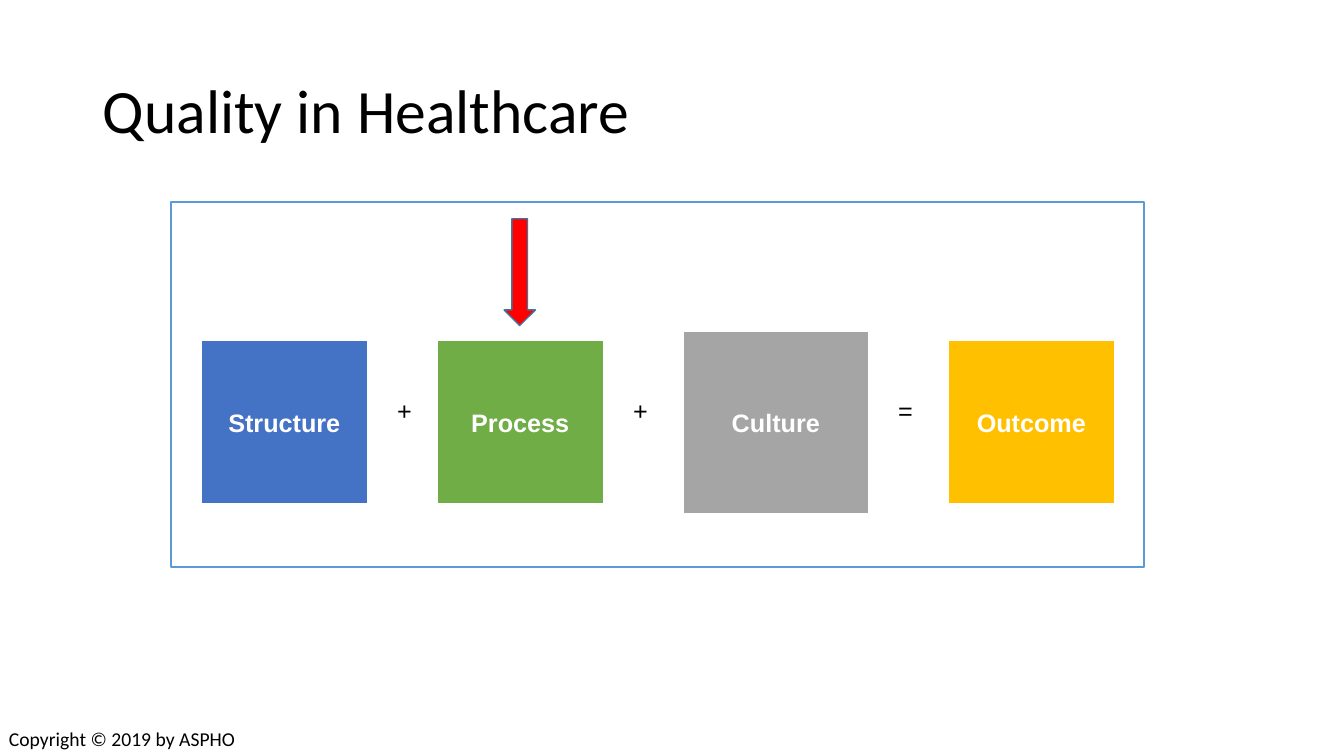
from pptx import Presentation
from pptx.dml.color import RGBColor
from pptx.enum.shapes import MSO_SHAPE
from pptx.enum.text import MSO_ANCHOR, PP_ALIGN
from pptx.util import Inches, Pt

RECTANGLE, DOWN_ARROW = MSO_SHAPE.RECTANGLE, MSO_SHAPE.DOWN_ARROW
MIDDLE, TOP = MSO_ANCHOR.MIDDLE, MSO_ANCHOR.TOP
LEFT, CENTER = PP_ALIGN.LEFT, PP_ALIGN.CENTER


def write(shape, text, font_name, size, color="000000", bold=False,
          align=LEFT, anchor=TOP, wrap=True):
    frame = shape.text_frame
    frame.text = text
    frame.word_wrap = wrap
    frame.vertical_anchor = anchor
    paragraph = frame.paragraphs[0]
    paragraph.alignment = align
    font = paragraph.runs[0].font
    font.name, font.size, font.bold = font_name, Pt(size), bold
    font.color.rgb = RGBColor.from_string(color)


def add_block(kind, left, top, width, height, fill, line, line_width):
    """Add a preset shape; a fill of None leaves it hollow."""
    shape = slide.shapes.add_shape(
        kind, Inches(left), Inches(top), Inches(width), Inches(height))
    shape.shadow.inherit = False
    if fill:
        shape.fill.solid()
        shape.fill.fore_color.rgb = RGBColor.from_string(fill)
    else:
        shape.fill.background()
    shape.line.color.rgb = RGBColor.from_string(line)
    shape.line.width = Pt(line_width)
    return shape


presentation = Presentation()
presentation.slide_width = Inches(13.33)
presentation.slide_height = Inches(7.5)
slide = presentation.slides.add_slide(presentation.slide_layouts[5])

title = slide.shapes.title
title.left, title.top = Inches(0.92), Inches(0.4)
title.width, title.height = Inches(11.5), Inches(1.45)
write(title, "Quality in Healthcare", "Calibri", 44, anchor=MIDDLE)
title.text_frame.paragraphs[0].line_spacing = 0.9

add_block(RECTANGLE, 1.7, 2, 9.65, 3.63, None, "5B9BD5", 1.5)

# Terms of the equation, all centred on one horizontal axis
axis = 4.19
terms = [
    ("Structure", 1.99, 1.66, 1.63, "4472C4"),
    ("Process", 4.33, 1.66, 1.63, "70AD47"),
    ("Culture", 6.77, 1.85, 1.82, "A5A5A5"),
    ("Outcome", 9.4, 1.66, 1.63, "FFC000"),
]
for label, left, width, height, fill in terms:
    term = add_block(RECTANGLE, left, axis - height / 2, width, height,
                     fill, "FFFFFF", 1.5)
    write(term, label, "Arial", 18, "FFFFFF", bold=True,
          align=CENTER, anchor=MIDDLE, wrap=False)

for sign, left, width in [("+", 3.84, 0.41), ("+", 6.18, 0.39), ("=", 8.81, 0.58)]:
    operator = slide.shapes.add_textbox(
        Inches(left), Inches(3.87), Inches(width), Inches(0.6))
    write(operator, sign, "Arial", 18)

add_block(DOWN_ARROW, 5, 2.17, 0.31, 1.06, "FF0000", "43739E", 1)

copyright_line = slide.shapes.add_textbox(
    Inches(-0.01), Inches(7.16), Inches(2.48), Inches(0.34))
write(copyright_line, "Copyright © 2019 by ASPHO", "Calibri", 14)

presentation.save("out.pptx")
